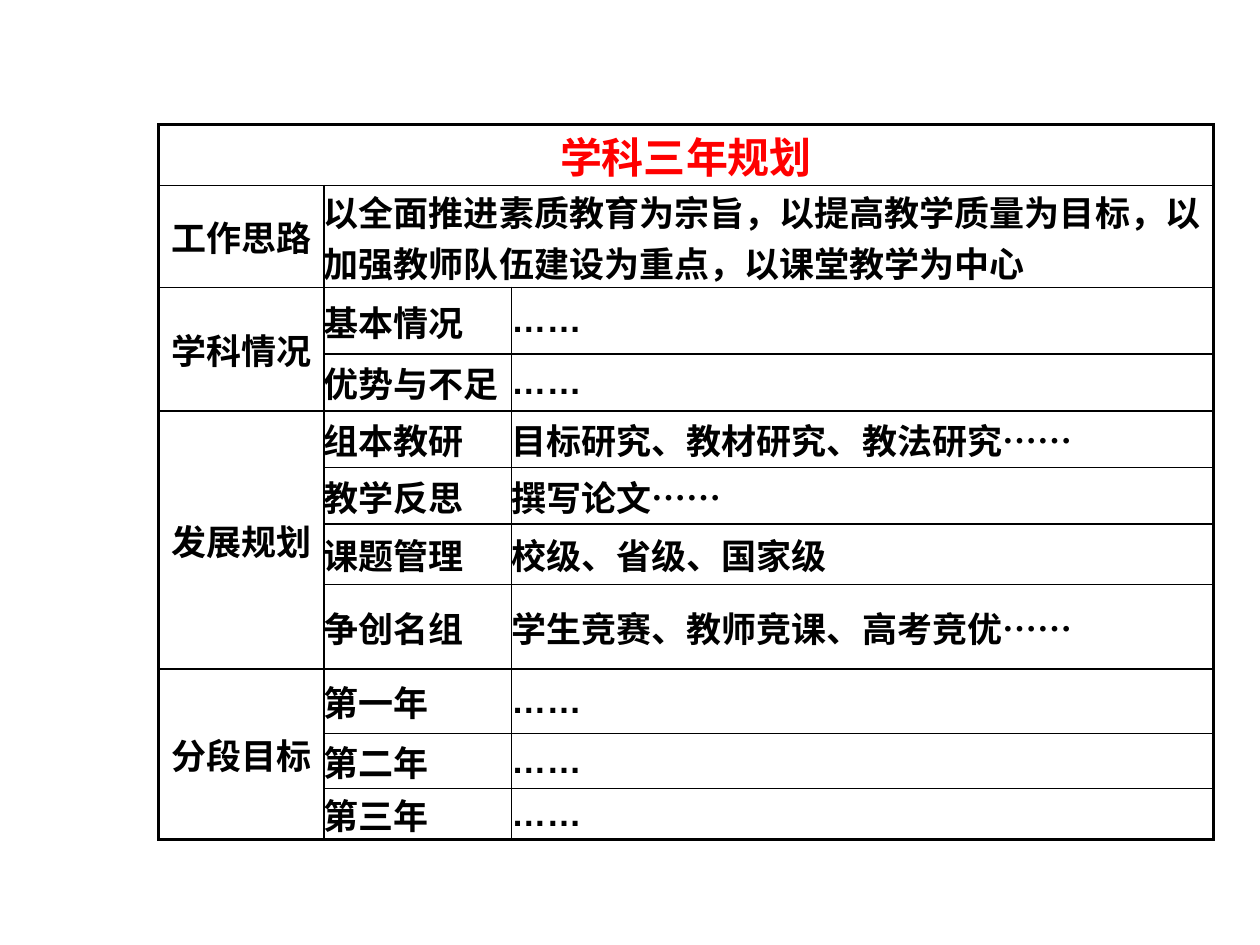
"""Build the three-year subject plan table slide."""
from lxml import etree
from pptx import Presentation, util as u
from pptx.dml import color
from pptx.enum import text
from pptx.oxml import ns

COLORS = {"ink": "000000", "title": "FF0000"}
FONT = "Noto Sans CJK SC"
DOTS = "……"
COLUMNS = [1.31, 1.49, 5.57]
ROWS = [0.45, 0.8, 0.53, 0.45, 0.45, 0.45, 0.48, 0.67, 0.51, 0.44, 0.4]
THIN, THICK = 1, 2.25
GRID = [
    ["学科三年规划", "", ""],
    ["工作思路", "以全面推进素质教育为宗旨，以提高教学质量为目标，以加强教师队伍建设为重点，以课堂教学为中心", ""],
    ["学科情况", "基本情况", DOTS],
    ["", "优势与不足", DOTS],
    ["发展规划", "组本教研", "目标研究、教材研究、教法研究" + DOTS],
    ["", "教学反思", "撰写论文" + DOTS],
    ["", "课题管理", "校级、省级、国家级"],
    ["", "争创名组", "学生竞赛、教师竞课、高考竞优" + DOTS],
    ["分段目标", "第一年", DOTS],
    ["", "第二年", DOTS],
    ["", "第三年", DOTS],
]
MERGES = [(0, 0, 0, 2), (1, 1, 1, 2), (2, 0, 3, 0), (4, 0, 7, 0), (8, 0, 10, 0)]


def add_text(para, words, *, size=20, ink="ink", latin=FONT):
    span = para.add_run()
    span.text = words
    span.font.size = u.Pt(size)
    span.font.bold = True
    span.font.name = latin
    span.font.color.rgb = color.RGBColor.from_string(COLORS[ink])
    etree.SubElement(span.font._element, ns.qn("a:ea"), typeface=FONT)


def add_borders(cell, widths):
    properties = cell._tc.get_or_add_tcPr()
    for index, (side, width) in enumerate(widths.items()):
        line = etree.Element(ns.qn(f"a:ln{side}"), w=str(u.Pt(width)))
        fill = etree.SubElement(line, ns.qn("a:solidFill"))
        etree.SubElement(fill, ns.qn("a:srgbClr"), val=COLORS["ink"])
        properties.insert(index, line)


deck = Presentation()
deck.slide_width, deck.slide_height = u.Inches(10), u.Inches(7.5)
page = deck.slides.add_slide(deck.slide_layouts[6])
table = page.shapes.add_table(
    len(ROWS), len(COLUMNS), u.Inches(1.26), u.Inches(0.99),
    u.Inches(sum(COLUMNS)), u.Inches(sum(ROWS))).table
table.first_row = table.horz_banding = False
for column, width in zip(table.columns, COLUMNS):
    column.width = u.Inches(width)
for row, height in zip(table.rows, ROWS):
    row.height = u.Inches(height)
for top, left, bottom, right in MERGES:
    table.cell(top, left).merge(table.cell(bottom, right))

for r, values in enumerate(GRID):
    for c, words in enumerate(values):
        cell = table.cell(r, c)
        cell.fill.background()
        cell.margin_left = cell.margin_right = cell.margin_top = cell.margin_bottom = 0
        cell.vertical_anchor = text.MSO_ANCHOR.MIDDLE
        add_borders(cell, {
            "L": THICK if c == 0 else THIN,
            "R": THICK if c + cell.span_width == len(COLUMNS) else THIN,
            "T": THICK if r == 0 else THIN,
            "B": THICK if r + cell.span_height == len(ROWS) else THIN,
        })
        para = cell.text_frame.paragraphs[0]
        para.alignment = text.PP_ALIGN.CENTER if c == 0 else text.PP_ALIGN.LEFT
        label = words.removesuffix(DOTS)
        if label:
            add_text(para, label, size=24 if r == 0 else 20, ink="title" if r == 0 else "ink")
        if words.endswith(DOTS):
            add_text(para, DOTS, latin="Arial")

deck.save("out.pptx")
